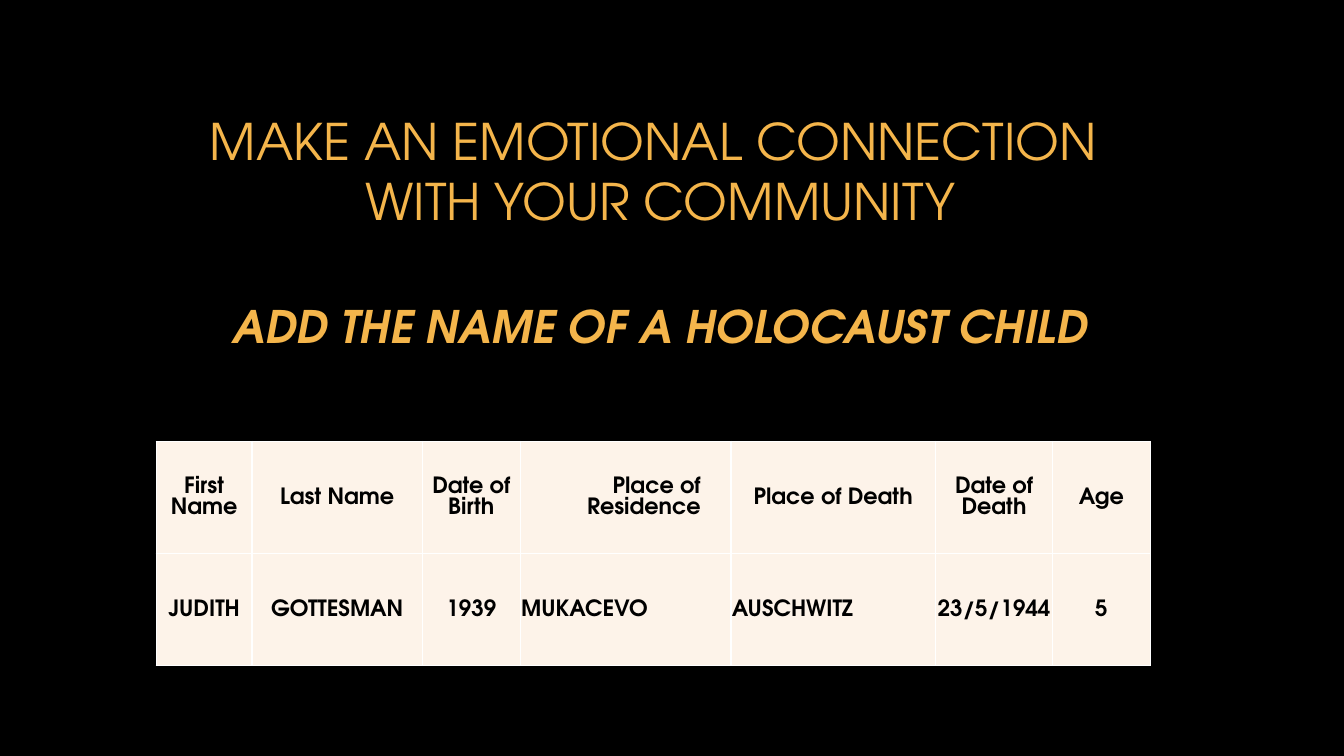
from lxml.etree import SubElement
from pptx import Presentation
from pptx.dml.color import RGBColor
from pptx.enum.text import MSO_ANCHOR, MSO_AUTO_SIZE, PP_ALIGN
from pptx.oxml.ns import qn
from pptx.util import Inches, Pt

COLORS = {"background": "000000", "title": "F4B54B", "cell": "FDF3E9",
          "cell_text": "000000", "border": "FFFFFF"}
COLUMN_WIDTHS = [0.95, 1.69, 0.97, 2.09, 2.03, 1.16, 0.97]
ROW_HEIGHT = 1.11
RECORDS = [
    ["First Name", "Last Name", "Date of Birth", "Place of Residence",
     "Place of Death", "Date of Death", "Age"],
    ["JUDITH", "GOTTESMAN", "1939", "MUKACEVO", "AUSCHWITZ", "23/5/1944", "5"],
]
# Cells that are not centred, by row and column
ALIGNMENTS = {(0, 3): PP_ALIGN.RIGHT, (1, 3): PP_ALIGN.LEFT, (1, 4): PP_ALIGN.LEFT}


class SlideBuilder:
    font_name = "TeX Gyre Adventor"

    def __init__(self, presentation):
        self.slide = presentation.slides.add_slide(presentation.slide_layouts[0])
        subtitle = self.slide.placeholders[1].element
        subtitle.getparent().remove(subtitle)
        fill = self.slide.background.fill
        fill.solid()
        fill.fore_color.rgb = self.color("background")

    def color(self, name):
        return RGBColor.from_string(COLORS[name])

    def format_paragraph(self, paragraph, size, color, spacing, bold=False,
                         italic=False, alignment=PP_ALIGN.CENTER):
        paragraph.alignment = alignment
        paragraph.line_spacing = Pt(spacing)
        for run in paragraph.runs:
            font = run.font
            font.name, font.size = self.font_name, Pt(size)
            font.bold, font.italic = bold, italic
            font.color.rgb = self.color(color)

    def add_title(self, heading, call_to_action):
        title = self.slide.shapes.title
        title.left, title.top = Inches(1.55), Inches(0.7)
        title.width, title.height = Inches(10), Inches(2.85)
        frame = title.text_frame
        frame.auto_size = MSO_AUTO_SIZE.NONE
        frame.vertical_anchor = MSO_ANCHOR.BOTTOM
        frame.paragraphs[0].text = heading
        self.format_paragraph(frame.paragraphs[0], 36, "title", 43)
        action = frame.add_paragraph()
        action.text = call_to_action
        action.space_before = Pt(44)
        self.format_paragraph(action, 32, "title", 43, bold=True, italic=True)

    def add_table(self, records):
        table = self.slide.shapes.add_table(
            len(records), len(COLUMN_WIDTHS), Inches(1.55), Inches(4.38),
            Inches(sum(COLUMN_WIDTHS)), Inches(ROW_HEIGHT * len(records))).table
        for column, width in zip(table.columns, COLUMN_WIDTHS):
            column.width = Inches(width)
        for row_index, record in enumerate(records):
            table.rows[row_index].height = Inches(ROW_HEIGHT)
            for column_index, text in enumerate(record):
                alignment = ALIGNMENTS.get((row_index, column_index), PP_ALIGN.CENTER)
                self.fill_cell(table.cell(row_index, column_index), text, alignment)

    def fill_cell(self, cell, text, alignment):
        cell.text_frame.text = text
        cell.vertical_anchor = MSO_ANCHOR.MIDDLE
        cell.margin_left = cell.margin_top = Inches(0.01)
        cell.margin_right = Inches(0.3 if alignment == PP_ALIGN.RIGHT else 0.01)
        cell.margin_bottom = 0
        self.format_paragraph(cell.text_frame.paragraphs[0], 16, "cell_text", 15,
                              bold=True, alignment=alignment)
        self.add_borders(cell)
        cell.fill.solid()
        cell.fill.fore_color.rgb = self.color("cell")

    def add_borders(self, cell):
        properties = cell._tc.get_or_add_tcPr()
        for side in ("lnL", "lnR", "lnT", "lnB"):
            line = SubElement(properties, qn(f"a:{side}"), w=str(Pt(1)))
            fill = SubElement(line, qn("a:solidFill"))
            SubElement(fill, qn("a:srgbClr"), val=COLORS["border"])


def main():
    presentation = Presentation()
    presentation.slide_width = Inches(13.33)
    presentation.slide_height = Inches(7.5)
    builder = SlideBuilder(presentation)
    builder.add_title("MAKE AN EMOTIONAL CONNECTION \vWITH YOUR COMMUNITY",
                      "ADD THE NAME OF A HOLOCAUST CHILD")
    builder.add_table(RECORDS)
    presentation.save("out.pptx")


if __name__ == "__main__":
    main()
